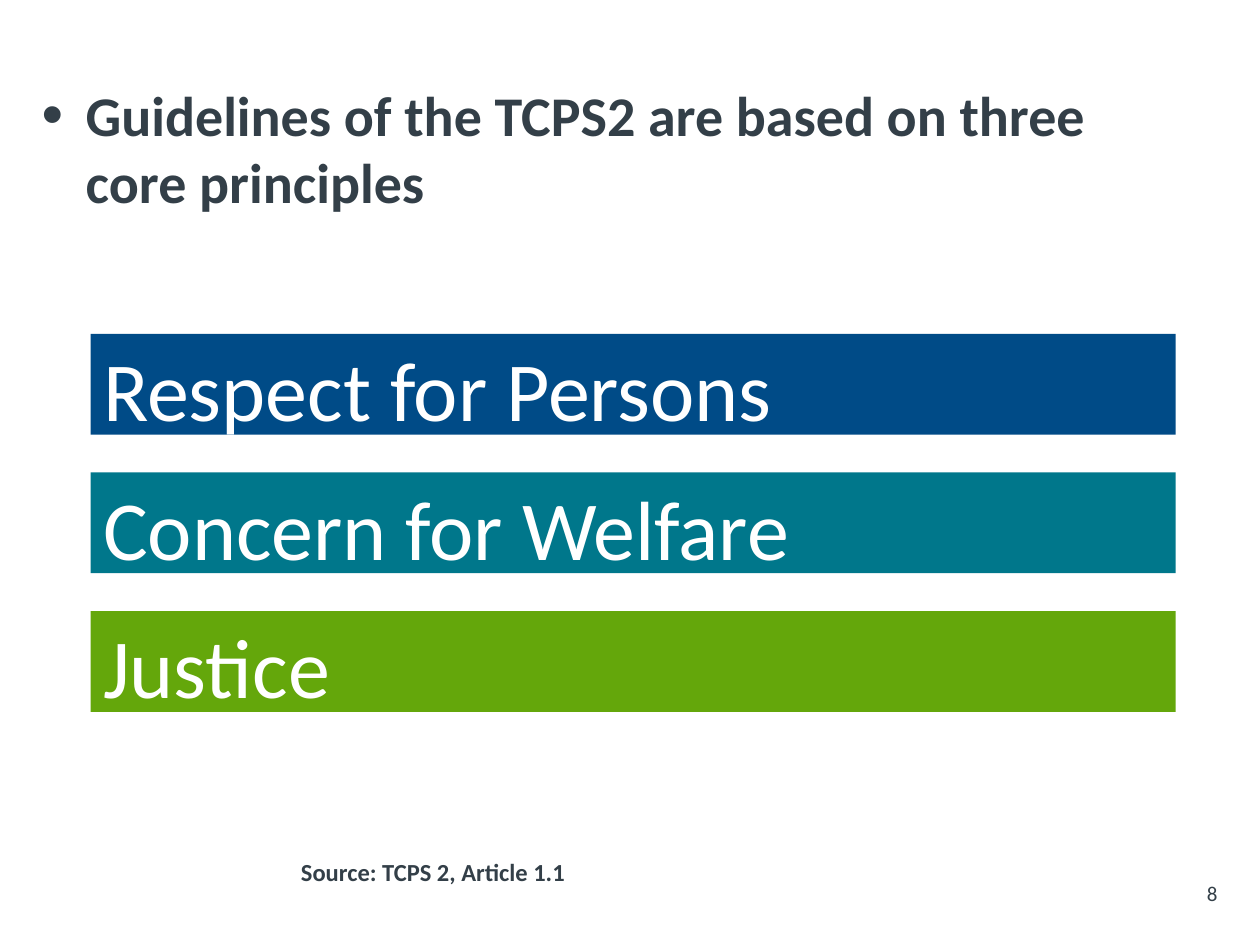
from lxml import etree
from pptx import Presentation
from pptx.dml.color import RGBColor
from pptx.enum import shapes, text
from pptx.oxml.ns import qn
from pptx.util import Inches, Pt

SLATE = RGBColor(0x33, 0x3F, 0x48)
WHITE = RGBColor(0xFF, 0xFF, 0xFF)
BLUE = RGBColor(0x00, 0x4B, 0x87)
TEAL = RGBColor(0x00, 0x77, 0x8B)
GREEN = RGBColor(0x64, 0xA7, 0x0B)

PRINCIPLES = [
    ("Respect for Persons", BLUE),
    ("Concern for Welfare", TEAL),
    ("Justice", GREEN),
]


def add_run(p, words, size, color, bold=False):
    r = p.add_run()
    r.text = words
    r.font.name = "Calibri"
    r.font.size = Pt(size)
    r.font.bold = bold
    r.font.color.rgb = color


def set_insets(tf, left, top, right, bottom):
    tf.margin_left, tf.margin_top = Inches(left), Inches(top)
    tf.margin_right, tf.margin_bottom = Inches(right), Inches(bottom)


def add_text(s, box, words, size, bold=False, wrap=True):
    tf = s.shapes.add_textbox(*map(Inches, box)).text_frame
    tf.word_wrap = wrap
    add_run(tf.paragraphs[0], words, size, SLATE, bold)
    return tf


def set_hanging(p, indent, bullet=None, percent=100):
    pPr = p._p.get_or_add_pPr()
    pPr.set("marL", str(Inches(indent)))
    pPr.set("indent", str(-Inches(indent)))
    if bullet:
        etree.SubElement(pPr, qn("a:buSzPct")).set("val", str(percent * 1000))
        etree.SubElement(pPr, qn("a:buFont")).set("typeface", "Arial")
        etree.SubElement(pPr, qn("a:buChar")).set("char", bullet)


def add_bar(s, top, words, color):
    sp = s.shapes.add_shape(shapes.MSO_SHAPE.RECTANGLE, Inches(0.72),
                            Inches(top), Inches(8.61), Inches(0.8))
    sp.shadow.inherit = False
    sp.fill.solid()
    sp.fill.fore_color.rgb = color
    sp.line.fill.background()
    tf = sp.text_frame
    tf.word_wrap = True
    tf.vertical_anchor = text.MSO_ANCHOR.MIDDLE
    set_insets(tf, 0.1, 0.1, 0.1, 0.04)
    p = tf.paragraphs[0]
    p.alignment = text.PP_ALIGN.LEFT
    add_run(p, words, 48, WHITE)


def main():
    prs = Presentation()
    prs.slide_width, prs.slide_height = Inches(10), Inches(7.5)
    s = prs.slides.add_slide(prs.slide_layouts[6])

    # Heading
    tf = add_text(s, (0.33, 0.64, 8.99, 1.25),
                  "Guidelines of the TCPS2 are based on three core principles",
                  32, bold=True)
    set_insets(tf, 0, 0, 0, 0)
    set_hanging(tf.paragraphs[0], 0.35, "•", 110)

    # Core principles
    for i, (words, color) in enumerate(PRINCIPLES):
        add_bar(s, 2.65 + 1.1 * i, words, color)

    # Source and slide number
    tf = add_text(s, (2.29, 6.75, 2.31, 0.34), "Source: TCPS 2, Article 1.1",
                  14, bold=True)
    set_hanging(tf.paragraphs[0], 0.51)
    add_text(s, (9.48, 6.94, 0.4, 0.3), "8", 12, wrap=False)

    prs.save("out.pptx")


if __name__ == "__main__":
    main()
